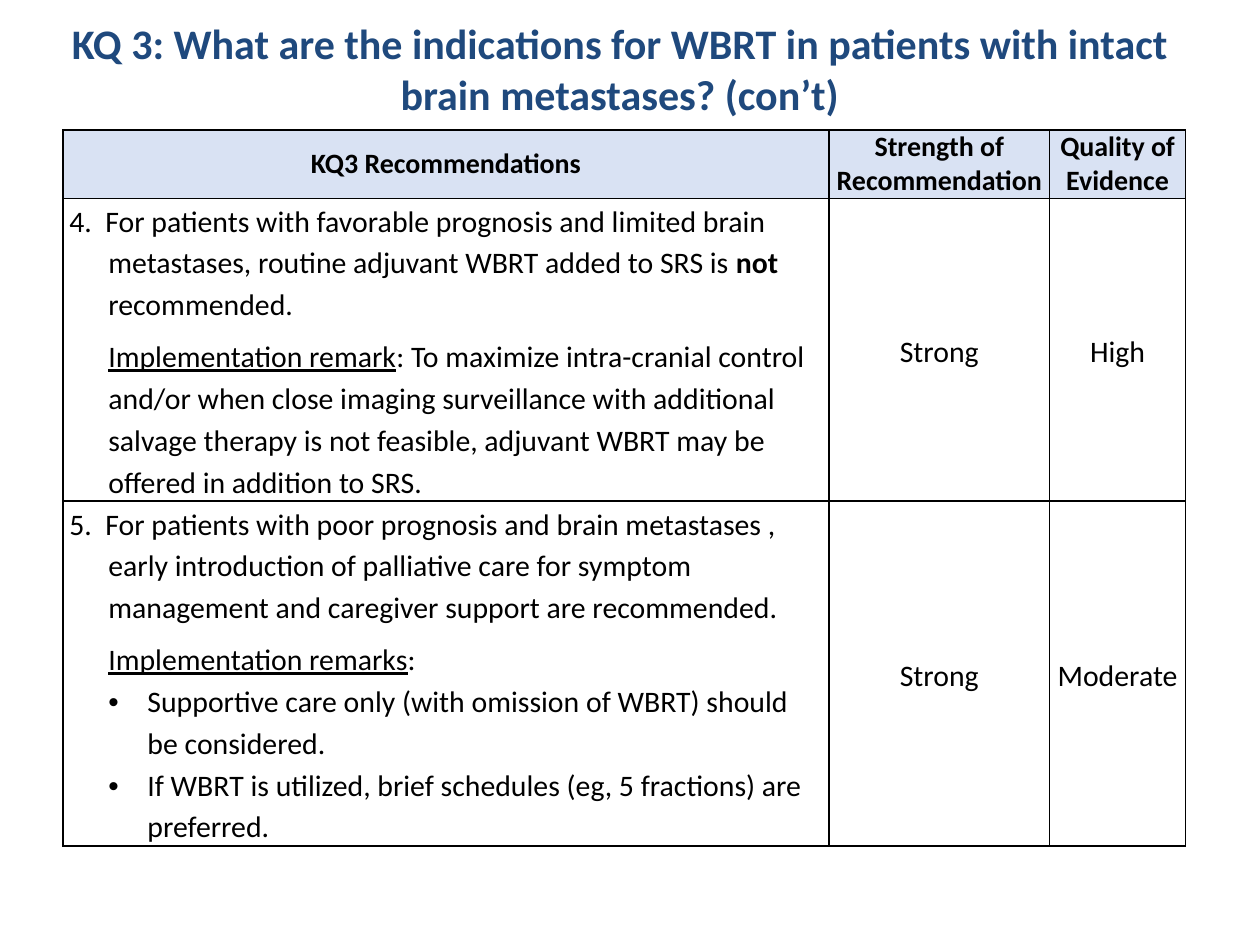
from pptx import Presentation
from pptx.dml.color import RGBColor
from pptx.enum.text import MSO_ANCHOR, PP_ALIGN
from pptx.oxml.ns import qn
from pptx.util import Inches, Pt
from lxml import etree

MIDDLE, TOP = MSO_ANCHOR.MIDDLE, MSO_ANCHOR.TOP
CENTER, LEFT = PP_ALIGN.CENTER, PP_ALIGN.LEFT
WIDE, HIGH = 10, 7.5
COLS = (6.08, 1.75, 1.08)
ROWS = (0.54, 2.4, 2.73)
STEP = 0.31
HEADS = ("KQ3 Recommendations", "Strength of Recommendation", "Quality of Evidence")
BODY = (
    (
        (
            ("item", (("4.  For patients with favorable prognosis and limited brain metastases, "
                       "routine adjuvant WBRT added to SRS is ", ""),
                      ("not ", "b"), ("recommended.", ""))),
            ("note", (("Implementation remark", "u"),
                      (": To maximize intra-cranial control and/or when close imaging "
                       "surveillance with additional salvage therapy is not feasible, "
                       "adjuvant WBRT may be offered in addition to SRS.", ""))),
        ),
        "Strong", "High",
    ),
    (
        (
            ("item", (("5.  For patients with poor prognosis and brain metastases , early "
                       "introduction of palliative care for symptom management and "
                       "caregiver support are recommended.", ""),)),
            ("note", (("Implementation remarks", "u"), (":", ""))),
            ("dot", (("Supportive care only (with omission of WBRT) should be considered.", ""),)),
            ("dot", (("If WBRT is utilized, brief schedules (eg, 5 fractions) are preferred.", ""),)),
        ),
        "Strong", "Moderate",
    ),
)
INDENT = {"item": (1, -1), "note": (1, 0), "dot": (2, -1)}


def color(code):
    return RGBColor.from_string(code)


def add_run(para, text, size, tone="000000", marks=""):
    run = para.add_run()
    run.text = text
    font = run.font
    font.name, font.size = "Calibri", Pt(size)
    font.bold, font.underline = "b" in marks, "u" in marks
    font.color.rgb = color(tone)


def add_title(slide):
    title = slide.shapes.title
    title.left, title.top = Inches(0.042 * WIDE), Inches(0.08)
    title.width, title.height = Inches(0.9 * WIDE), Inches(0.92)
    frame = title.text_frame
    frame.word_wrap = True
    frame.vertical_anchor = MIDDLE
    para = frame.paragraphs[0]
    para.alignment = CENTER
    add_run(para, "KQ 3: What are the indications for WBRT in patients "
            "with intact brain metastases? (con’t)", 24, "1F497D", "b")


def add_edges(cell):
    props = cell._tc.get_or_add_tcPr()
    for side in ("lnL", "lnR", "lnT", "lnB"):
        line = etree.SubElement(props, qn(f"a:{side}"), w=str(Pt(1)))
        fill = etree.SubElement(line, qn("a:solidFill"))
        etree.SubElement(fill, qn("a:srgbClr"), val="000000")


def style_cell(cell, anchor, tone=None):
    cell.margin_left = cell.margin_right = Inches(0.05)
    cell.margin_top = cell.margin_bottom = 0
    cell.vertical_anchor = anchor
    add_edges(cell)
    if tone:
        cell.fill.solid()
        cell.fill.fore_color.rgb = color(tone)
    else:
        cell.fill.background()


def fill_label(cell, text, size, marks="", tone=None, space=None):
    style_cell(cell, MIDDLE, tone)
    para = cell.text_frame.paragraphs[0]
    para.alignment = CENTER
    para.line_spacing = space
    add_run(para, text, size, marks=marks)


def fill_advice(cell, paras):
    style_cell(cell, TOP)
    frame = cell.text_frame
    for num, (kind, runs) in enumerate(paras):
        para = frame.add_paragraph() if num else frame.paragraphs[0]
        props = para._p.get_or_add_pPr()
        left, hang = INDENT[kind]
        props.set("marL", str(Inches(left * STEP)))
        props.set("indent", str(Inches(hang * STEP)))
        if kind == "dot":
            etree.SubElement(props, qn("a:buFont"), typeface="Arial")
            etree.SubElement(props, qn("a:buChar"), char="•")
        para.alignment = LEFT
        para.line_spacing = 1.15
        if kind == "item":
            para.space_after = Pt(6)
        for text, marks in runs:
            add_run(para, text, 17, marks=marks)


def add_grid(slide):
    frame = slide.shapes.add_table(len(ROWS), len(COLS), Inches(0.05 * WIDE), Inches(1.03),
                                   Inches(sum(COLS)), Inches(sum(ROWS)))
    table = frame.table
    table.first_row = table.horz_banding = False
    for col, width in zip(table.columns, COLS):
        col.width = Inches(width)
    for row, height in zip(table.rows, ROWS):
        row.height = Inches(height)
    for col, text in enumerate(HEADS):
        fill_label(table.cell(0, col), text, 16, "b", "D9E2F3")
    for row, (paras, *grades) in enumerate(BODY, 1):
        fill_advice(table.cell(row, 0), paras)
        for col, text in enumerate(grades, 1):
            fill_label(table.cell(row, col), text, 17, space=1.15)


def main():
    deck = Presentation()
    deck.slide_width, deck.slide_height = Inches(WIDE), Inches(HIGH)
    slide = deck.slides.add_slide(deck.slide_layouts[5])
    add_title(slide)
    add_grid(slide)
    deck.save("out.pptx")


if __name__ == "__main__":
    main()
